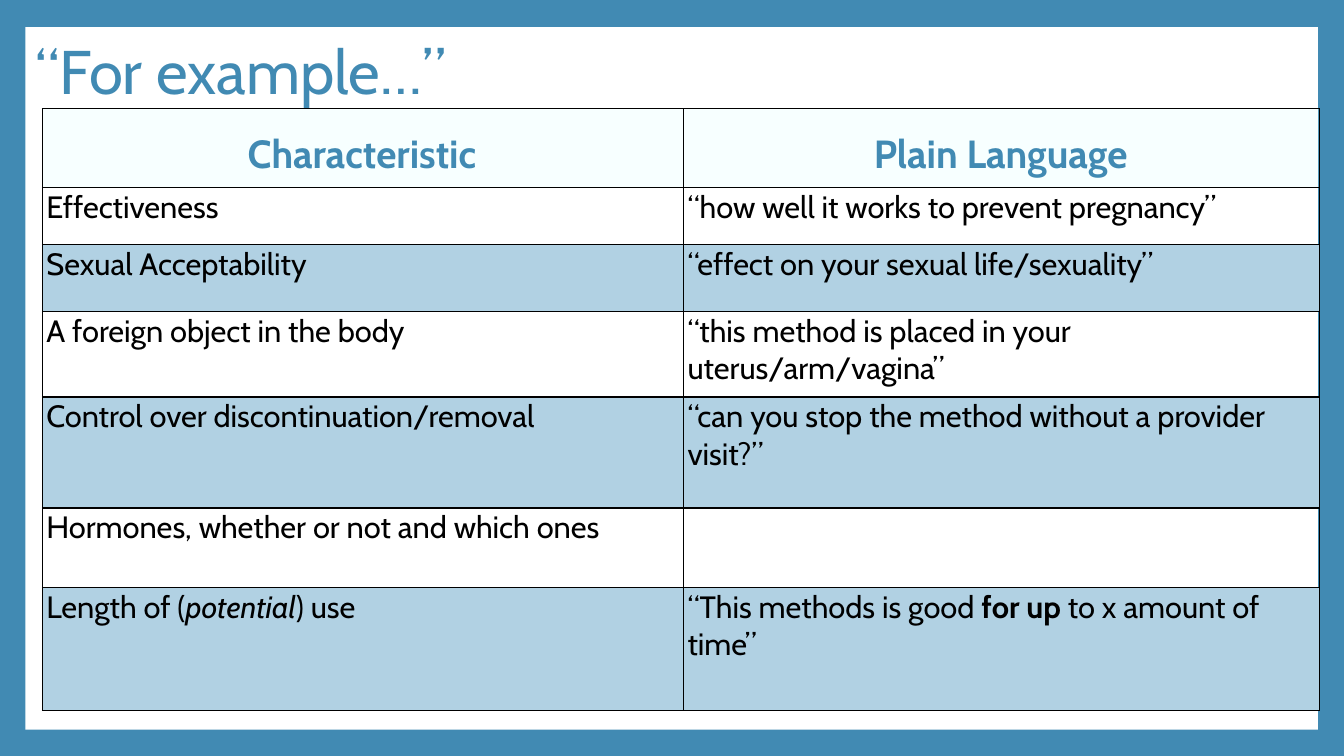
from lxml import etree
from pptx import Presentation
from pptx.dml.color import RGBColor
from pptx.enum.shapes import MSO_SHAPE
from pptx.enum.text import MSO_ANCHOR, PP_ALIGN
from pptx.oxml.ns import qn
from pptx.util import Inches, Pt

RECTANGLE = MSO_SHAPE.RECTANGLE
TOP, MIDDLE, BOTTOM = MSO_ANCHOR.TOP, MSO_ANCHOR.MIDDLE, MSO_ANCHOR.BOTTOM
LEFT, CENTER = PP_ALIGN.LEFT, PP_ALIGN.CENTER

BLUE, PALE_BLUE, MINT = "418AB3", "B1D1E3", "CCFFFF"
WHITE, BLACK = "FFFFFF", "000000"

HEADINGS = ["Characteristic", "Plain Language"]
# Each cell is a list of (text, style) runs
PHRASES = [
    [[("Effectiveness", "")], [("“how well it works to prevent pregnancy”", "")]],
    [[("Sexual Acceptability", "")], [("“effect on your sexual life/sexuality”", "")]],
    [[("A foreign object in the body", "")],
     [("“this method is placed in your uterus/arm/vagina”", "")]],
    [[("Control over discontinuation/removal", "")],
     [("“can you stop the method without a provider visit?”", "")]],
    [[("Hormones, whether or not and which ones", "")], []],
    [[("Length of (", ""), ("potential", "italic"), (") use", "")],
     [("“This methods is good ", ""), ("for up", "bold"), (" to x amount of time”", "")]],
]
# Shares of the slide's size, in percent
COLUMN_WIDTHS = [47.71, 47.34]
ROW_HEIGHTS = [10.4, 7.6, 8.8, 11.33, 14.67, 10.53, 16.27]


def color(hex_code):
    return RGBColor.from_string(hex_code)


class SlideBuilder:
    font_name = "Cabin"

    def __init__(self, presentation):
        self.width, self.height = presentation.slide_width, presentation.slide_height
        self.slide = presentation.slides.add_slide(presentation.slide_layouts[6])

    def across(self, percent):
        return round(self.width * percent / 100)

    def down(self, percent):
        return round(self.height * percent / 100)

    def box(self, left, top, width, height):
        return self.across(left), self.down(top), self.across(width), self.down(height)

    def background(self, hex_code):
        fill = self.slide.background.fill
        fill.solid()
        fill.fore_color.rgb = color(hex_code)

    def panel(self, area, hex_code):
        panel = self.slide.shapes.add_shape(RECTANGLE, *self.box(*area))
        panel.shadow.inherit = False
        panel.fill.solid()
        panel.fill.fore_color.rgb = color(hex_code)
        panel.line.fill.background()

    def set_text(self, paragraph, runs, size, hex_code, bold=None, align=LEFT):
        paragraph.alignment = align
        font = paragraph.font
        font.name, font.size, font.bold = self.font_name, Pt(size), bold
        font.color.rgb = color(hex_code)
        for text, style in runs:
            run = paragraph.add_run()
            run.text = text
            if style == "italic":
                run.font.italic = True
            elif style == "bold":
                run.font.bold = True

    def title(self, area, text, size, hex_code):
        frame = self.slide.shapes.add_textbox(*self.box(*area)).text_frame
        frame.word_wrap = True
        frame.vertical_anchor = MIDDLE
        paragraph = frame.paragraphs[0]
        paragraph.line_spacing = 0.9
        self.set_text(paragraph, [(text, "")], size, hex_code)

    def table(self, left, top, widths, heights):
        area = self.box(left, top, sum(widths), sum(heights))
        table = self.slide.shapes.add_table(len(heights), len(widths), *area).table
        table.first_row = table.horz_banding = False
        for column, width in zip(table.columns, widths):
            column.width = self.across(width)
        for row, height in zip(table.rows, heights):
            row.height = self.down(height)
        return table

    def cell(self, cell, runs, size, hex_code, fill=None, alpha=None,
             anchor=TOP, bold=None, align=LEFT):
        cell.margin_left, cell.margin_top = Inches(0.04), Inches(0.01)
        cell.margin_right, cell.margin_bottom = Inches(0.06), Inches(0.09)
        cell.vertical_anchor = anchor
        self.borders(cell, BLACK, 1)
        if fill:
            cell.fill.solid()
            cell.fill.fore_color.rgb = color(fill)
        else:
            cell.fill.background()
        if alpha:
            tint = cell._tc.tcPr.find(qn("a:solidFill"))[0]
            etree.SubElement(tint, qn("a:alpha"), val=str(alpha * 1000))
        self.set_text(cell.text_frame.paragraphs[0], runs, size, hex_code, bold, align)

    def borders(self, cell, hex_code, points):
        properties = cell._tc.get_or_add_tcPr()
        for side in ("lnL", "lnR", "lnT", "lnB"):
            line = etree.SubElement(properties, qn(f"a:{side}"), w=str(Pt(points)))
            solid = etree.SubElement(line, qn("a:solidFill"))
            etree.SubElement(solid, qn("a:srgbClr"), val=hex_code)


def main():
    presentation = Presentation()
    presentation.slide_width, presentation.slide_height = Inches(13.33), Inches(7.5)
    builder = SlideBuilder(presentation)

    # Blue frame around a white panel
    builder.background(BLUE)
    builder.panel((1.88, 3.6, 96.17, 92.93), WHITE)

    # Title
    builder.title((1.88, 0, 81.02, 19.73), "“For example…”", 44, BLUE)

    # Heading row
    table = builder.table(3.15, 14.4, COLUMN_WIDTHS, ROW_HEIGHTS)
    for column, heading in enumerate(HEADINGS):
        builder.cell(table.cell(0, column), [(heading, "")], 28, BLUE, fill=MINT,
                     alpha=14, anchor=BOTTOM, bold=True, align=CENTER)

    # Phrases, every second row shaded
    for row, phrases in enumerate(PHRASES, start=1):
        shade = PALE_BLUE if row % 2 == 0 else None
        for column, runs in enumerate(phrases):
            builder.cell(table.cell(row, column), runs, 22, BLACK, fill=shade)

    presentation.save("out.pptx")


if __name__ == "__main__":
    main()
